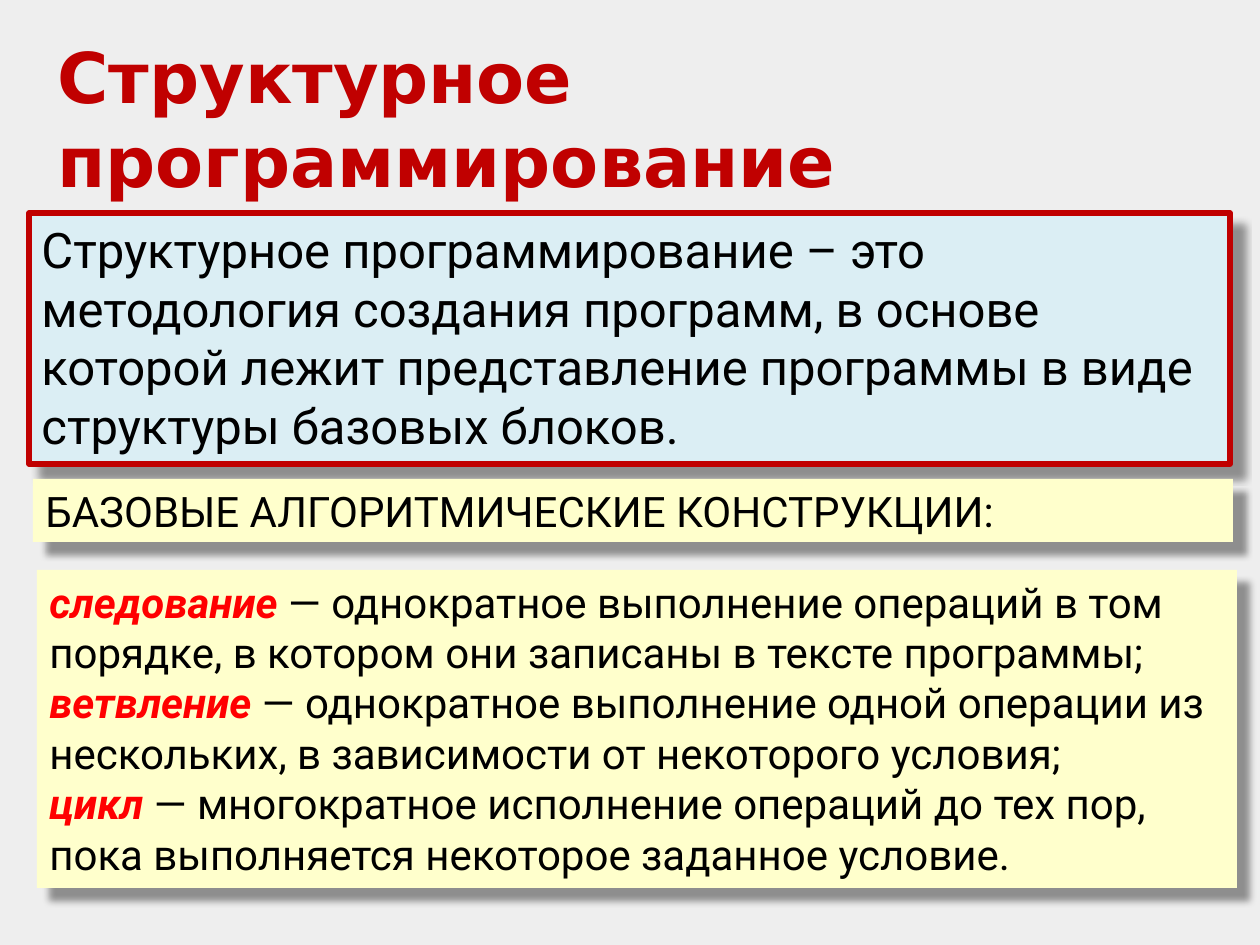
from lxml.etree import SubElement
from pptx import Presentation
from pptx.dml.color import RGBColor
from pptx.enum.shapes import MSO_SHAPE as SHAPE
from pptx.enum.text import MSO_ANCHOR as ANCHOR, MSO_AUTO_SIZE as AUTO, PP_ALIGN as ALIGN
from pptx.oxml.ns import qn
from pptx.util import Emu, Pt

PX = 914400 / 126
RED, BLACK, TERM = "C00000", "000000", "FF0000"
BLUE, YELLOW = "DBEEF4", "FFFFCC"

HEADING = "Структурное программирование"
DEFINITION = ("Структурное программирование – это методология создания программ, "
              "в основе которой лежит представление программы в виде "
              "структуры базовых блоков.")
SUBHEADING = "БАЗОВЫЕ АЛГОРИТМИЧЕСКИЕ КОНСТРУКЦИИ:"
CONSTRUCTS = [
    ("следование", " — однократное выполнение операций в том порядке, "
                   "в котором они записаны в тексте программы;"),
    ("ветвление", " — однократное выполнение одной операции из нескольких, "
                  "в зависимости от некоторого условия;"),
    ("цикл", " — многократное исполнение операций до тех пор, "
             "пока выполняется некоторое заданное условие."),
]


def px(n):
    return Emu(round(n * PX))


def rgb(value):
    return RGBColor.from_string(value)


def style(font, size, color, name="Roboto", bold=False):
    font.size, font.name, font.bold = Pt(size), name, bold
    font.color.rgb = rgb(color)


def add_shadow(s):
    """Soft black shadow falling to the lower right."""
    s.shadow.inherit = False
    effects = s._element.spPr.find(qn("a:effectLst"))
    shadow = SubElement(effects, qn("a:outerShdw"), blurRad=str(Pt(4)), dist=str(Pt(10)),
                        dir="2700000", algn="tl", rotWithShape="0")
    color = SubElement(shadow, qn("a:srgbClr"), val=BLACK)
    SubElement(color, qn("a:alpha"), val="40000")


def add_title(slide, box):
    s = slide.shapes.title
    s.left, s.top, s.width, s.height = map(px, box)
    tf = s.text_frame
    tf.text = HEADING
    tf.word_wrap, tf.auto_size = True, AUTO.NONE
    tf.vertical_anchor = ANCHOR.MIDDLE
    p = tf.paragraphs[0]
    p.alignment = ALIGN.LEFT
    style(p.font, 40, RED, "DejaVu Sans", True)


def add_panel(slide, box, fill, size, paragraphs, outline=None):
    """Shadowed panel; each paragraph is a (term, text) pair."""
    s = slide.shapes.add_shape(SHAPE.RECTANGLE, *map(px, box))
    s.fill.solid()
    s.fill.fore_color.rgb = rgb(fill)
    if outline:
        s.line.color.rgb = rgb(outline)
        s.line.width = Pt(3)
    else:
        s.line.fill.background()
    add_shadow(s)

    tf = s.text_frame
    tf.word_wrap = True
    tf.vertical_anchor = ANCHOR.TOP
    for i, (term, text) in enumerate(paragraphs):
        p = tf.add_paragraph() if i else tf.paragraphs[0]
        p.alignment = ALIGN.LEFT
        if term:
            r = p.add_run()
            r.text = term
            style(r.font, size, TERM, bold=True)
            r.font.italic = True
        r = p.add_run()
        r.text = text
        style(r.font, size, BLACK)


def main():
    prs = Presentation()
    prs.slide_width, prs.slide_height = px(1260), px(945)
    slide = prs.slides.add_slide(prs.slide_layouts[5])
    slide.background.fill.solid()
    slide.background.fill.fore_color.rgb = rgb("EEEEEE")

    add_title(slide, (45, 26, 1169, 183))
    add_panel(slide, (29, 213, 1201, 251), BLUE, 28, [("", DEFINITION)], RED)
    add_panel(slide, (33, 479, 1200, 63), YELLOW, 24, [("", SUBHEADING)])
    add_panel(slide, (37, 570, 1200, 318), YELLOW, 24, CONSTRUCTS)
    prs.save("out.pptx")


if __name__ == "__main__":
    main()
